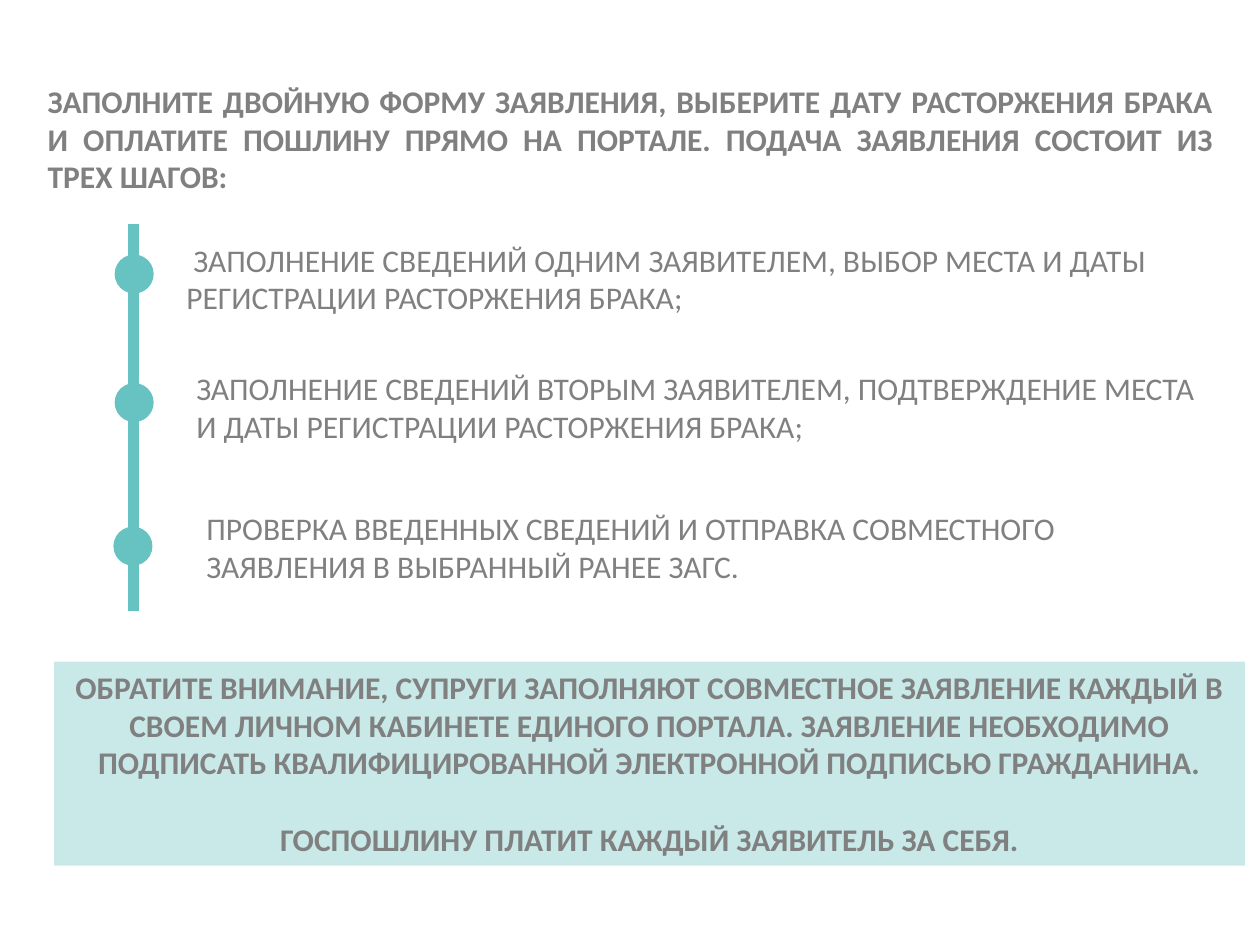
from lxml import etree
from pptx import Presentation
from pptx import util as u
from pptx.dml.color import RGBColor
from pptx.enum import shapes, text
from pptx.oxml.ns import qn

TEAL = RGBColor(0x67, 0xC2, 0xC2)
GRAY = RGBColor(0x80, 0x80, 0x80)
ALIGN = text.PP_ALIGN


class Deck:
    font = "Calibri"
    size = u.Pt(18)

    def __init__(self, wide, high):
        self.prs = Presentation()
        self.prs.slide_width = u.Inches(wide)
        self.prs.slide_height = u.Inches(high)
        self.slide = self.prs.slides.add_slide(self.prs.slide_layouts[6])

    def fill(self, frame, lines, align, bold, gap=0):
        frame.word_wrap = True
        frame.auto_size = text.MSO_AUTO_SIZE.SHAPE_TO_FIT_TEXT
        for i, line in enumerate(lines):
            para = frame.paragraphs[0] if i == 0 else frame.add_paragraph()
            para.alignment = align
            if i:
                para.space_before = u.Pt(gap)
            run = para.add_run()
            run.text = line
            run.font.name = self.font
            run.font.size = self.size
            run.font.bold = bold
            run.font.color.rgb = GRAY

    def label(self, box, line, align=ALIGN.LEFT, bold=False):
        item = self.slide.shapes.add_textbox(*map(u.Inches, box))
        self.fill(item.text_frame, [line], align, bold)

    def shape(self, kind, box):
        item = self.slide.shapes.add_shape(kind, *map(u.Inches, box))
        item.shadow.inherit = False
        item.fill.solid()
        item.fill.fore_color.rgb = TEAL
        item.line.fill.background()
        return item

    def dot(self, left, top, size=0.31):
        self.shape(shapes.MSO_SHAPE.OVAL, (left, top, size, size))

    def note(self, box, lines, alpha, gap):
        item = self.shape(shapes.MSO_SHAPE.RECTANGLE, box)
        tint = item._element.spPr.find(qn("a:solidFill"))[0]
        etree.SubElement(tint, qn("a:alpha")).set("val", str(alpha * 1000))
        item.text_frame.vertical_anchor = text.MSO_ANCHOR.TOP
        self.fill(item.text_frame, lines, ALIGN.CENTER, True, gap)

    def line(self, start, end, width):
        item = self.slide.shapes.add_connector(
            shapes.MSO_CONNECTOR.STRAIGHT, *map(u.Inches, start + end))
        item.line.color.rgb = TEAL
        item.line.width = u.Pt(width)
        etree.SubElement(item._element.spPr, qn("a:effectLst"))


def main():
    deck = Deck(10, 7.5)
    edge = 9.73
    deck.label(
        (0.28, 0.6, 9.45, 1.01),
        "ЗАПОЛНИТЕ ДВОЙНУЮ ФОРМУ ЗАЯВЛЕНИЯ, ВЫБЕРИТЕ ДАТУ РАСТОРЖЕНИЯ БРАКА "
        "И ОПЛАТИТЕ ПОШЛИНУ ПРЯМО НА ПОРТАЛЕ. ПОДАЧА ЗАЯВЛЕНИЯ СОСТОИТ ИЗ "
        "ТРЕХ ШАГОВ:",
        ALIGN.JUSTIFY, True)
    deck.line((1.06, 1.78), (1.06, 4.85), 6)
    steps = [
        (0.91, 2.02, 1.38, 1.86,
         " ЗАПОЛНЕНИЕ СВЕДЕНИЙ ОДНИМ ЗАЯВИТЕЛЕМ, ВЫБОР МЕСТА И ДАТЫ "
         "РЕГИСТРАЦИИ РАСТОРЖЕНИЯ БРАКА;"),
        (0.91, 3.04, 1.46, 2.88,
         "ЗАПОЛНЕНИЕ СВЕДЕНИЙ ВТОРЫМ ЗАЯВИТЕЛЕМ, ПОДТВЕРЖДЕНИЕ МЕСТА "
         "И ДАТЫ РЕГИСТРАЦИИ РАСТОРЖЕНИЯ БРАКА;"),
        (0.9, 4.18, 1.54, 3.99,
         "ПРОВЕРКА ВВЕДЕННЫХ СВЕДЕНИЙ И ОТПРАВКА СОВМЕСТНОГО "
         "ЗАЯВЛЕНИЯ В ВЫБРАННЫЙ РАНЕЕ ЗАГС."),
    ]
    for x, y, left, top, step in steps:
        deck.dot(x, y)
        deck.label((left, top, edge - left, 0.71), step)
    deck.note(
        (0.43, 5.25, 9.45, 1.62),
        ["ОБРАТИТЕ ВНИМАНИЕ, СУПРУГИ ЗАПОЛНЯЮТ СОВМЕСТНОЕ ЗАЯВЛЕНИЕ КАЖДЫЙ В "
         "СВОЕМ ЛИЧНОМ КАБИНЕТЕ ЕДИНОГО ПОРТАЛА. ЗАЯВЛЕНИЕ НЕОБХОДИМО "
         "ПОДПИСАТЬ КВАЛИФИЦИРОВАННОЙ ЭЛЕКТРОННОЙ ПОДПИСЬЮ ГРАЖДАНИНА.",
         "ГОСПОШЛИНУ ПЛАТИТ КАЖДЫЙ ЗАЯВИТЕЛЬ ЗА СЕБЯ."],
        alpha=35, gap=22)
    deck.prs.save("out.pptx")


if __name__ == "__main__":
    main()
